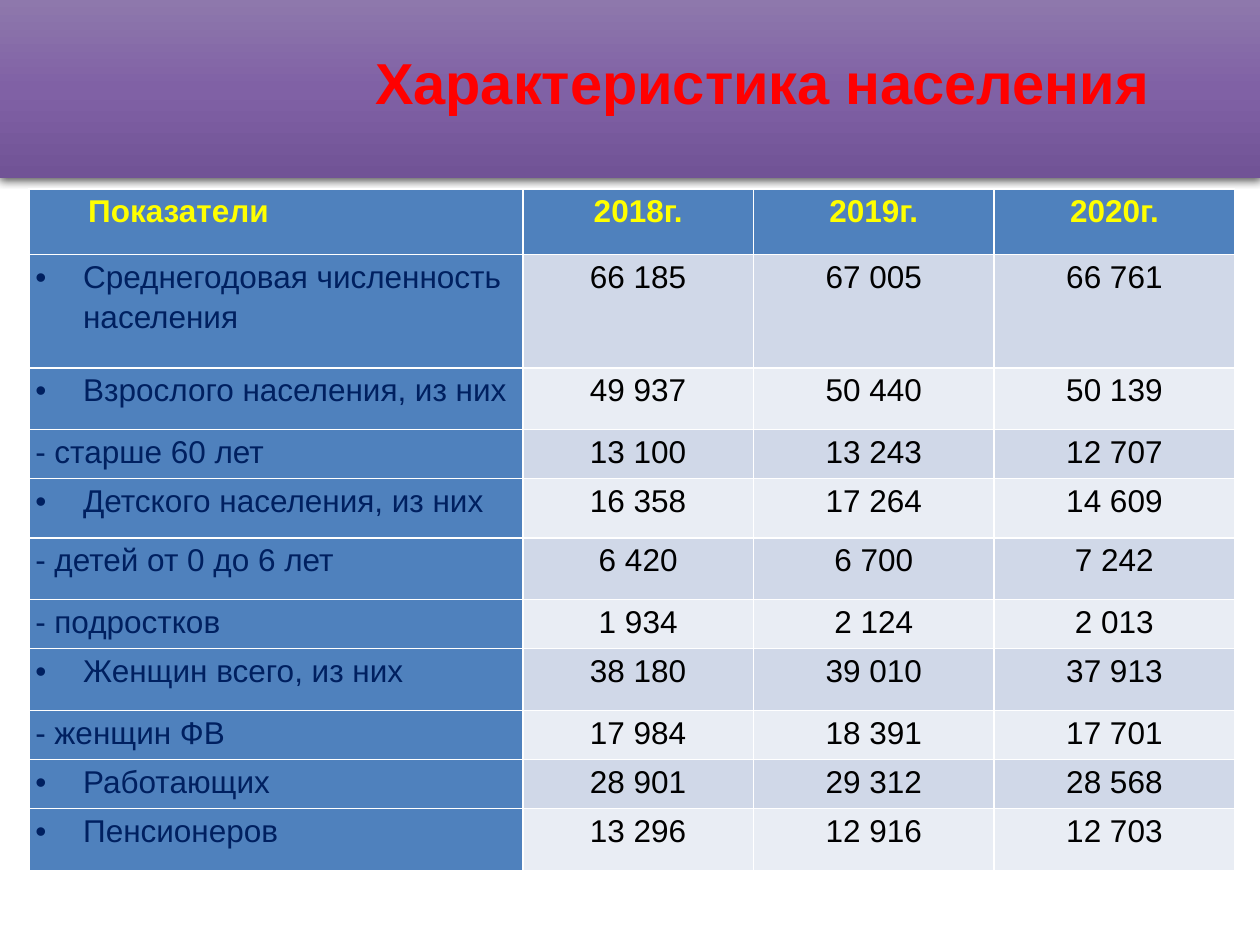
"""Build a slide with a table of population figures for three years."""
import pptx
import pptx.dml.color
import pptx.enum.shapes
import pptx.enum.text
import pptx.oxml
import pptx.oxml.ns
import pptx.util

Inches = pptx.util.Inches
ALIGN = pptx.enum.text.PP_ALIGN
HUES = {
    "red": "FF0000", "yellow": "FFFF00", "navy": "002060", "black": "000000",
    "blue": "4F81BD", "dark": "D0D8E8", "light": "E9EDF4",
    "top": "8E78AC", "mid": "8061A5", "low": "715396",
}
HEAD = ["Показатели", "2018г.", "2019г.", "2020г."]
ROWS = [
    (0.9, "•", "Среднегодовая численность населения", "66 185", "67 005", "66 761"),
    (0.49, "•", "Взрослого населения, из них", "49 937", "50 440", "50 139"),
    (0.39, "", "- старше 60 лет", "13 100", "13 243", "12 707"),
    (0.47, "•", "Детского населения, из них", "16 358", "17 264", "14 609"),
    (0.49, "", "- детей от 0 до 6 лет", "6 420", "6 700", "7 242"),
    (0.39, "", "- подростков", "1 934", "2 124", "2 013"),
    (0.49, "•", "Женщин всего, из них", "38 180", "39 010", "37 913"),
    (0.39, "", "- женщин ФВ", "17 984", "18 391", "17 701"),
    (0.39, "•", "Работающих", "28 901", "29 312", "28 568"),
    (0.49, "•", "Пенсионеров", "13 296", "12 916", "12 703"),
]
HEIGHTS = [0.52] + [row[0] for row in ROWS]
WIDTHS = [3.92, 1.83, 1.91, 1.91]


def color(name):
    """Return the named colour."""
    return pptx.dml.color.RGBColor.from_string(HUES[name])


def parse(tag, body="", attrs=""):
    """Return one drawing element made from its tag, content and attributes."""
    space = pptx.oxml.ns.nsdecls("a")
    return pptx.oxml.parse_xml(f"<a:{tag} {space} {attrs}>{body}</a:{tag}>")


def write(frame, text, size=18, hue="black", bold=False, align=ALIGN.LEFT,
          lines=1.15, bullet="", left=0, hang=0):
    """Put one formatted paragraph into a text frame."""
    para = frame.paragraphs[0]
    para.alignment, para.line_spacing = align, lines
    props = para._p.get_or_add_pPr()
    props.set("marL", str(Inches(left)))
    props.set("indent", str(-Inches(hang)))
    if bullet:
        props.append(parse("buFont", attrs='typeface="Arial"'))
        props.append(parse("buChar", attrs=f'char="{bullet}"'))
    run = para.add_run()
    run.text = text
    font = run.font
    font.name, font.size, font.bold = "Arial", pptx.util.Pt(size), bold
    font.color.rgb = color(hue)


class Deck:
    """Hold the style and the current slide."""

    def __init__(self):
        """Start a deck with one title-only slide."""
        self.show = pptx.Presentation()
        self.show.slide_width, self.show.slide_height = Inches(10), Inches(7.5)
        self.slide = self.show.slides.add_slide(self.show.slide_layouts[5])

    def band(self, height):
        """Draw the shaded band behind the title."""
        shape = self.slide.shapes.add_shape(
            pptx.enum.shapes.MSO_SHAPE.RECTANGLE, 0, 0, Inches(10), Inches(height))
        shape.line.fill.background()
        stops = "".join(
            f'<a:gs pos="{place * 1000}"><a:srgbClr val="{HUES[name]}"/></a:gs>'
            for place, name in [(0, "top"), (50, "mid"), (100, "low")])
        props = shape._element.spPr
        props.find(pptx.oxml.ns.qn("a:prstGeom")).addnext(parse(
            "gradFill", f'<a:gsLst>{stops}</a:gsLst><a:lin ang="5400000" scaled="0"/>'))
        blur, gap = pptx.util.Pt(4.5), pptx.util.Pt(1.5)
        props.append(parse(
            "effectLst",
            f'<a:outerShdw blurRad="{blur}" dist="{gap}" dir="5400000" rotWithShape="0">'
            f'<a:srgbClr val="{HUES["black"]}"><a:alpha val="63000"/></a:srgbClr>'
            '</a:outerShdw>'))
        self.slide.shapes.title._element.addprevious(shape._element)

    def title(self, text, box):
        """Place and fill the title."""
        shape = self.slide.shapes.title
        shape.left, shape.top, shape.width, shape.height = map(Inches, box)
        frame = shape.text_frame
        frame.vertical_anchor = pptx.enum.text.MSO_ANCHOR.MIDDLE
        write(frame, text, size=33, hue="red", bold=True, align=ALIGN.CENTER, lines=0.9)

    def cell(self, cell, text, fill, **style):
        """Fill one table cell."""
        cell.margin_left = cell.margin_right = Inches(0.05)
        cell.margin_top = cell.margin_bottom = 0
        cell.fill.solid()
        cell.fill.fore_color.rgb = color(fill)
        write(cell.text_frame, text, **style)

    def table(self, left, top):
        """Draw the table of figures."""
        grid = self.slide.shapes.add_table(
            len(HEIGHTS), len(WIDTHS), Inches(left), Inches(top),
            Inches(sum(WIDTHS)), Inches(sum(HEIGHTS))).table
        for col, width in zip(grid.columns, WIDTHS):
            col.width = Inches(width)
        for row, height in zip(grid.rows, HEIGHTS):
            row.height = Inches(height)
        for col, text in enumerate(HEAD):
            place = {"align": ALIGN.CENTER} if col else {"left": 0.42}
            self.cell(grid.cell(0, col), text, "blue", hue="yellow", bold=True, **place)
        for row, (_, bullet, label, *values) in enumerate(ROWS, 1):
            inset = 0.38 if bullet else 0
            self.cell(grid.cell(row, 0), label, "blue", hue="navy",
                      bullet=bullet, left=inset, hang=inset)
            for col, value in enumerate(values, 1):
                self.cell(grid.cell(row, col), value, "dark" if row % 2 else "light",
                          align=ALIGN.CENTER)


def main():
    """Build and save the slide."""
    deck = Deck()
    deck.band(1.41)
    deck.title("Характеристика населения", (2.29, 0.2, 7.52, 0.96))
    deck.table(0.23, 1.5)
    deck.show.save("out.pptx")


if __name__ == "__main__":
    main()
